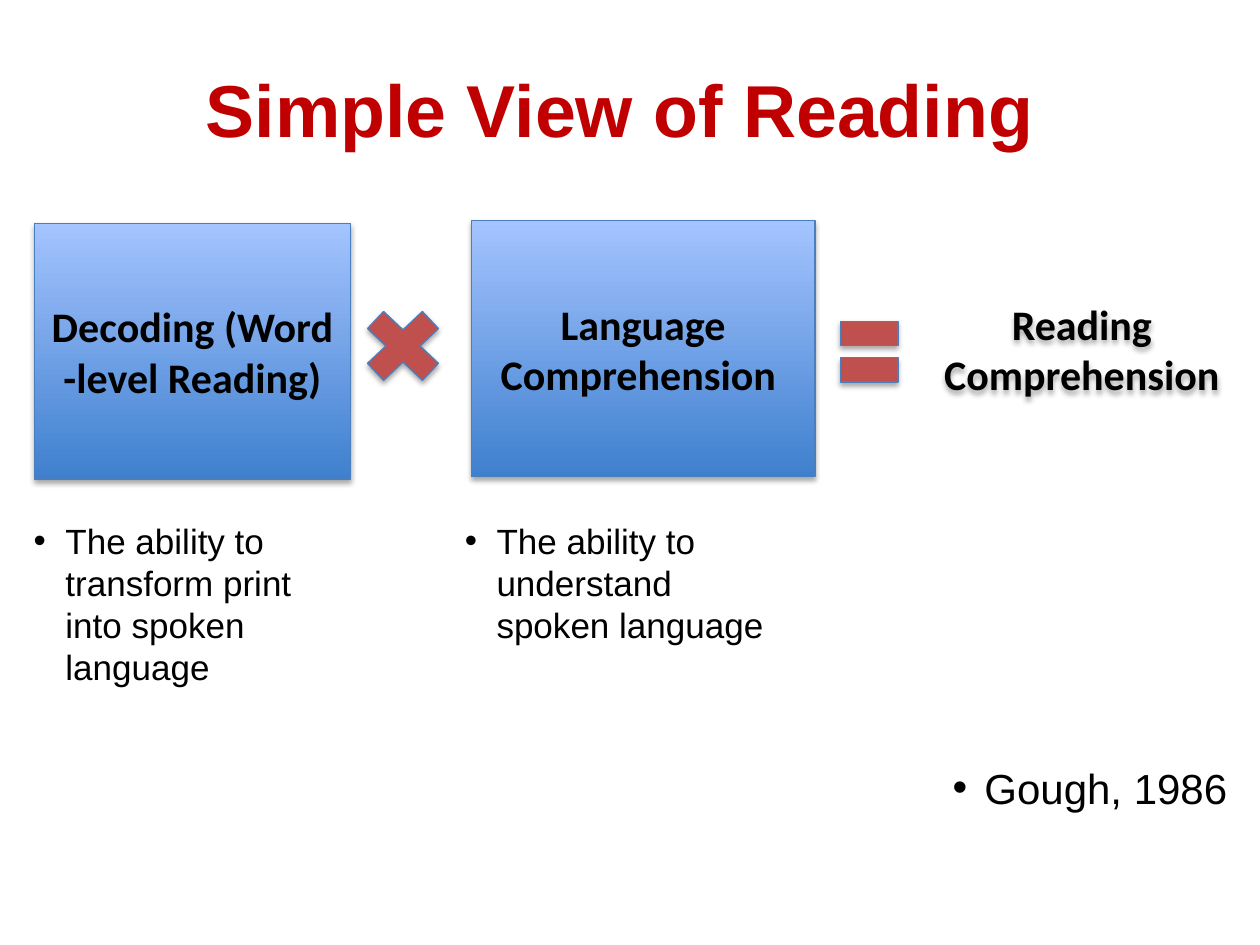
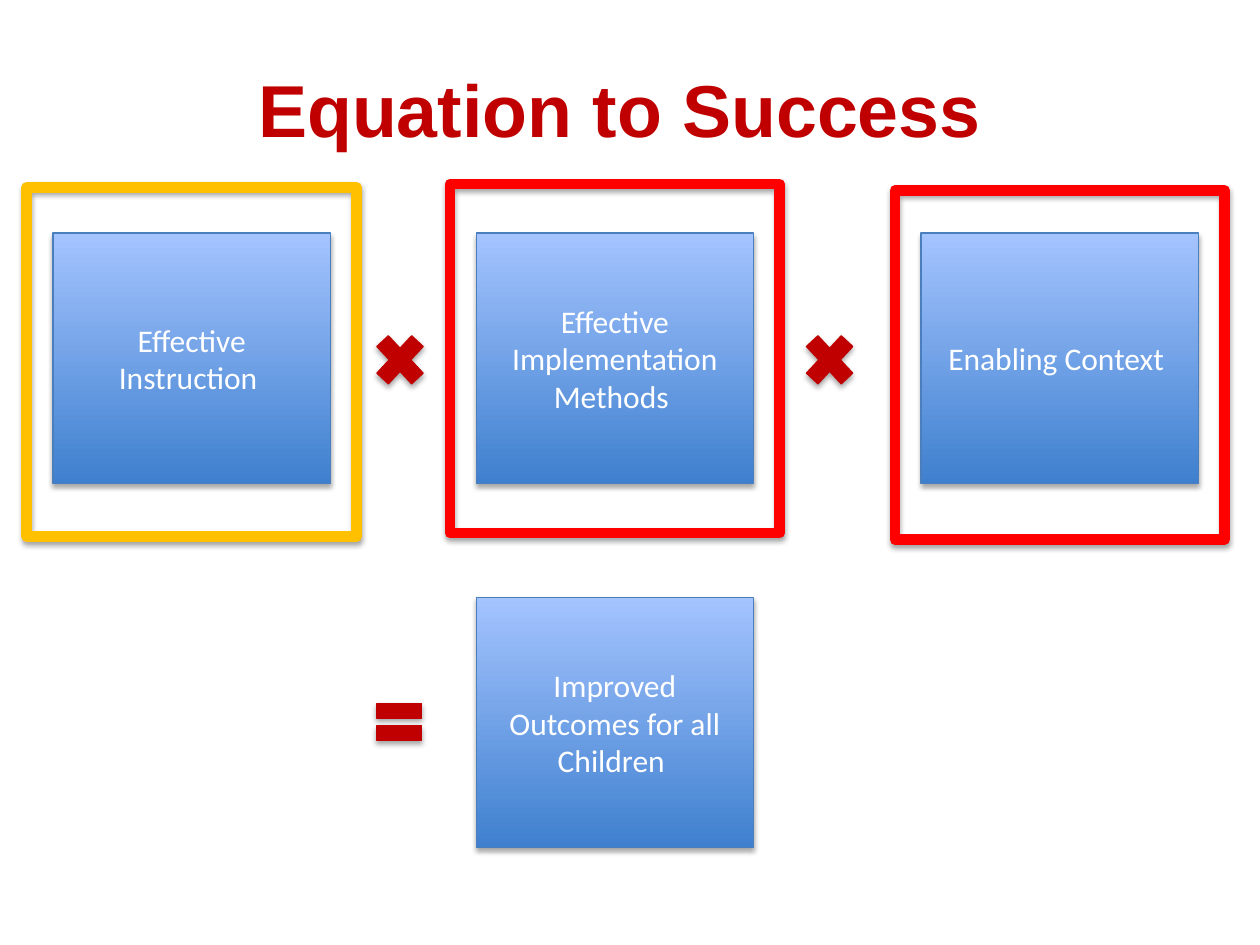
from dataclasses import dataclass

from lxml.etree import SubElement
from pptx import Presentation
from pptx.dml.color import RGBColor
from pptx.enum.shapes import MSO_SHAPE as Preset
from pptx.enum.text import MSO_ANCHOR as Anchor, PP_ALIGN as Align
from pptx.oxml.ns import qn
from pptx.util import Cm, Pt


@dataclass(frozen=True)
class Theme:
    heading_font: str = "Arial"
    box_font: str = "Calibri"
    title: str = "C00000"
    black: str = "000000"
    white: str = "FFFFFF"
    box_bottom: str = "3F80CE"
    box_top: str = "A4C4FF"
    outline: str = "4B7EBC"
    brick: str = "C0504D"
    amber: str = "FFC000"
    red: str = "FF0000"
    title_size: int = 42
    large_size: int = 24
    caption_size: int = 20
    small_size: int = 18
    thin_line: float = 0.75
    frame_line: float = 6


THEME = Theme()


def rgb(code):
    return RGBColor.from_string(code)


def add_run(paragraph, text, font, size, color, bold=False):
    run = paragraph.add_run()
    run.text = text
    run.font.name = font
    run.font.size = Pt(size)
    run.font.color.rgb = rgb(color)
    run.font.bold = bold


def add_shadow(shape):
    """Replace the inherited effect with a soft shadow below the shape."""
    shape.shadow.inherit = False
    effects = shape.element.spPr.find(qn("a:effectLst"))
    shadow = SubElement(effects, qn("a:outerShdw"), blurRad=str(Pt(3.1)),
                        dist=str(Pt(1.8)), dir="5400000", rotWithShape="0")
    color = SubElement(shadow, qn("a:srgbClr"), val=THEME.black)
    SubElement(color, qn("a:alpha"), val="35000")


def add_outlined(slide, preset, area, line_color, line_width=THEME.thin_line):
    """Add an unfilled, shadowed shape; line_color None means no outline."""
    shape = slide.shapes.add_shape(preset, *map(Cm, area))
    add_shadow(shape)
    shape.fill.background()
    if line_color:
        shape.line.color.rgb = rgb(line_color)
        shape.line.width = Pt(line_width)
    else:
        shape.line.fill.background()
    return shape


def add_label(shape, text, size, color, bold):
    frame = shape.text_frame
    frame.word_wrap = True
    frame.vertical_anchor = Anchor.MIDDLE
    paragraph = frame.paragraphs[0]
    paragraph.alignment = Align.CENTER
    add_run(paragraph, text, THEME.box_font, size, color, bold)


def add_box(slide, area, text, size, color, bold=False):
    box = add_outlined(slide, Preset.RECTANGLE, area, THEME.outline)
    box.fill.gradient()
    box.fill.gradient_angle = 90
    for stop, code in zip(box.fill.gradient_stops, (THEME.box_bottom, THEME.box_top)):
        stop.color.rgb = rgb(code)
    add_label(box, text, size, color, bold)


def add_operator(slide, preset, area, color, line_color):
    operator = add_outlined(slide, preset, area, line_color)
    operator.fill.solid()
    operator.fill.fore_color.rgb = rgb(color)


def add_text_box(slide, area):
    box = slide.shapes.add_textbox(*map(Cm, area))
    box.text_frame.word_wrap = True
    return box.text_frame


def add_title(slide, text):
    frame = add_text_box(slide, (1.27, 1.27, 22.86, 1.8))
    frame.margin_left = frame.margin_right = 0
    frame.margin_top = frame.margin_bottom = 0
    frame.vertical_anchor = Anchor.BOTTOM
    paragraph = frame.paragraphs[0]
    paragraph.alignment = Align.CENTER
    add_run(paragraph, text, THEME.heading_font, THEME.title_size, THEME.title, bold=True)


def add_bullet(slide, area, text, size, alignment=Align.LEFT):
    paragraph = add_text_box(slide, area).paragraphs[0]
    paragraph.alignment = alignment
    properties = paragraph._p.get_or_add_pPr()
    indent = Cm(0.64)
    properties.set("marL", str(indent))
    properties.set("indent", str(-indent))
    SubElement(properties, qn("a:buFont"), typeface=THEME.heading_font)
    SubElement(properties, qn("a:buChar"), char="•")
    add_run(paragraph, text, THEME.heading_font, size, THEME.black)


def new_slide(presentation, title):
    slide = presentation.slides.add_slide(presentation.slide_layouts[6])
    add_title(slide, title)
    return slide


def build_reading_slide(presentation):
    slide = new_slide(presentation, "Simple View of Reading ")
    add_bullet(slide, (0.43, 15.24, 24.56, 0.64), "Gough, 1986",
               THEME.large_size, Align.RIGHT)
    label_style = THEME.large_size, THEME.black, True
    add_box(slide, (0.69, 4.5, 6.38, 5.16), "Decoding (Word -level Reading)", *label_style)
    add_box(slide, (9.5, 4.45, 6.93, 5.16), "Language Comprehension ", *label_style)
    for preset, area in ((Preset.MATH_MULTIPLY, (7.06, 5.97, 2.13, 2.01)),
                         (Preset.MATH_EQUAL, (16.74, 6.05, 1.57, 2.08))):
        add_operator(slide, preset, area, THEME.brick, THEME.outline)
    result = add_outlined(slide, Preset.RECTANGLE, (18.62, 4.45, 6.38, 5.16), None)
    add_label(result, "Reading Comprehension", *label_style)
    for left, width, text in (
            (0.43, 6.78, "The ability to transform print into spoken language"),
            (9.12, 7.01, "The ability to understand spoken language")):
        add_bullet(slide, (left, 10.34, width, 5.92), text, THEME.caption_size)


def build_success_slide(presentation):
    slide = new_slide(presentation, "Equation to Success ")
    box_size = 5.59, 5.05
    label_style = THEME.small_size, THEME.white
    factors = (
        (1.07, 3.78, "Effective Instruction ", THEME.amber),
        (9.6, 3.71, "Effective Implementation Methods ", THEME.red),
        (18.57, 3.84, "Enabling Context ", THEME.red),
    )
    for left, frame_top, text, frame_color in factors:
        add_box(slide, (left, 4.7, *box_size), text, *label_style)
        add_outlined(slide, Preset.RECTANGLE, (left - 0.53, frame_top, 6.65, 7.04),
                     frame_color, THEME.frame_line)
    for preset, area in ((Preset.MATH_MULTIPLY, (7.39, 6.53, 1.35, 1.45)),
                         (Preset.MATH_MULTIPLY, (16.05, 6.53, 1.35, 1.45)),
                         (Preset.MATH_EQUAL, (7.44, 13.92, 1.22, 1.27))):
        add_operator(slide, preset, area, THEME.title, THEME.title)
    add_box(slide, (9.6, 12.04, *box_size), "Improved Outcomes for all Children ", *label_style)


def main():
    presentation = Presentation()
    presentation.slide_width = Cm(25.4)
    presentation.slide_height = Cm(19.05)
    build_reading_slide(presentation)
    build_success_slide(presentation)
    presentation.save("out.pptx")


if __name__ == "__main__":
    main()
